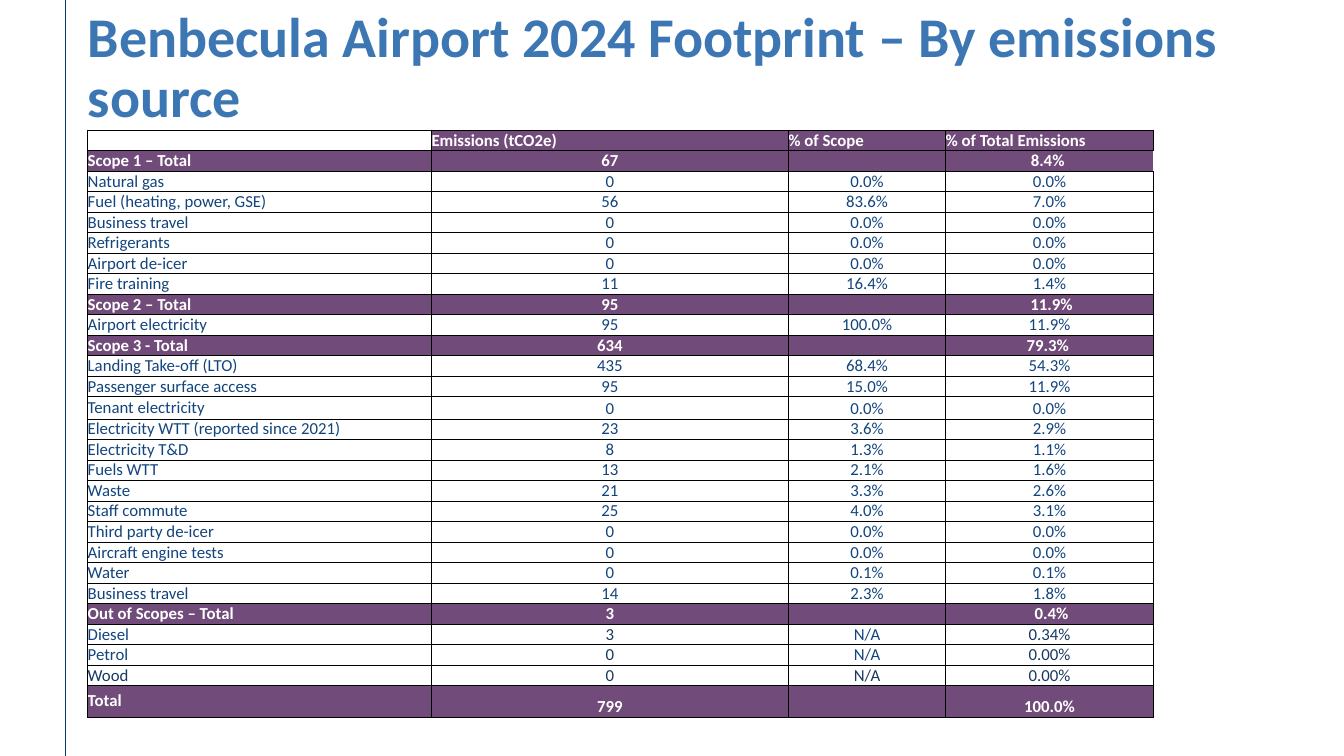
from lxml import etree
from pptx import Presentation
from pptx.dml.color import RGBColor
from pptx.enum.shapes import MSO_CONNECTOR
from pptx.enum.text import MSO_ANCHOR, MSO_AUTO_SIZE, PP_ALIGN
from pptx.oxml.ns import qn
from pptx.util import Inches, Pt

STRAIGHT = MSO_CONNECTOR.STRAIGHT
TOP, MIDDLE, BOTTOM = MSO_ANCHOR.TOP, MSO_ANCHOR.MIDDLE, MSO_ANCHOR.BOTTOM
LEFT, CENTER = PP_ALIGN.LEFT, PP_ALIGN.CENTER
NO_AUTOFIT = MSO_AUTO_SIZE.NONE

COLORS = {
    "title": "3C77B3",
    "rule": "023671",
    "band": "714B79",
    "white": "FFFFFF",
    "body": "12447D",
    "dark": "183860",
    "border": "000000",
}
FONT = "Calibri"
TITLE = "Benbecula Airport 2024 Footprint – By emissions source"
COLUMN_WIDTHS = [3.41, 3.54, 1.56, 2.06]
ROW_HEIGHT = 0.19
SPECIAL_HEIGHTS = {"": 0.18, "Tenant electricity": 0.22, "Wood": 0.18, "Total": 0.31}

EMISSIONS = [
    ("", "Emissions (tCO2e)", "% of Scope", "% of Total Emissions"),
    ("Scope 1 – Total", "67", "", "8.4% "),
    ("Natural gas", "0", "0.0%", "0.0%"),
    ("Fuel (heating, power, GSE)", "56", "83.6%", "7.0%"),
    ("Business travel", "0", "0.0%", "0.0%"),
    ("Refrigerants", "0", "0.0%", "0.0%"),
    ("Airport de-icer", "0", "0.0%", "0.0%"),
    ("Fire training", "11", "16.4%", "1.4%"),
    ("Scope 2 – Total", "95", "", " 11.9%"),
    ("Airport electricity", "95", "100.0%", "11.9%"),
    ("Scope 3 - Total", "634", "", "79.3% "),
    ("Landing Take-off (LTO)", "435", "68.4%", "54.3%"),
    ("Passenger surface access", "95", "15.0%", "11.9%"),
    ("Tenant electricity", "0", "0.0%", "0.0%"),
    ("Electricity WTT (reported since 2021)", "23", "3.6%", "2.9%"),
    ("Electricity T&D", "8", "1.3%", "1.1%"),
    ("Fuels WTT", "13", "2.1%", "1.6%"),
    ("Waste", "21", "3.3%", "2.6%"),
    ("Staff commute", "25", "4.0%", "3.1%"),
    ("Third party de-icer", "0", "0.0%", "0.0%"),
    ("Aircraft engine tests", "0", "0.0%", "0.0%"),
    ("Water", "0", "0.1%", "0.1%"),
    ("Business travel", "14", "2.3%", "1.8%"),
    ("Out of Scopes – Total", "3", "", " 0.4%"),
    ("Diesel", "3", "N/A", "0.34%"),
    ("Petrol", "0", "N/A", "0.00%"),
    ("Wood", "0", "N/A", "0.00%"),
    ("Total", "799", "", "100.0%"),
]


def rgb(name):
    return RGBColor.from_string(COLORS[name])


def set_font(para, size, color, bold):
    font = para.font
    font.name, font.size, font.bold = FONT, Pt(size), bold
    font.color.rgb = rgb(color)


def clear_margins(target):
    target.margin_left = target.margin_right = 0
    target.margin_top = target.margin_bottom = 0


def add_title(page):
    title = page.shapes.title
    title.left, title.top = Inches(0.87), Inches(0.09)
    title.width, title.height = Inches(12.68), Inches(1.06)
    frame = title.text_frame
    frame.text = TITLE
    frame.word_wrap = True
    frame.auto_size = NO_AUTOFIT
    frame.vertical_anchor = TOP
    clear_margins(frame)
    para = frame.paragraphs[0]
    para.alignment = LEFT
    para.line_spacing = 0.9
    set_font(para, 40, "title", True)


def add_margin_rule(page, height):
    rule = page.shapes.add_connector(STRAIGHT, Inches(0.65), 0, Inches(0.65), height)
    rule.line.color.rgb = rgb("rule")
    rule.line.width = Pt(1)
    etree.SubElement(rule._element.spPr, qn("a:effectLst"))


def set_borders(cell, sides):
    properties = cell._tc.get_or_add_tcPr()
    for side in "LRTB":
        line = etree.SubElement(properties, qn(f"a:ln{side}"), w=str(Pt(0.5)))
        if side in sides:
            fill = etree.SubElement(line, qn("a:solidFill"))
            etree.SubElement(fill, qn("a:srgbClr"), val=COLORS["border"])
        else:
            etree.SubElement(line, qn("a:noFill"))


def text_color(label, column, banded):
    if banded:
        return "white"
    if label == "Wood" or (label in ("Diesel", "Petrol") and column in (1, 3)):
        return "dark"
    return "body"


def fill_cell(cell, text, label, column):
    header = label == ""
    banded = "Total" in label or (header and column > 0)
    # The Scope 1 total is open on the right
    open_right = label.startswith("Scope 1") and column == 3
    set_borders(cell, "LTB" if open_right else "LRTB")
    if banded:
        cell.fill.solid()
        cell.fill.fore_color.rgb = rgb("band")
    else:
        cell.fill.background()

    clear_margins(cell)
    left_aligned = header or column == 0
    in_middle = left_aligned and (label, column) != ("Business travel", 0)
    cell.vertical_anchor = MIDDLE if in_middle else BOTTOM
    cell.text = text
    para = cell.text_frame.paragraphs[0]
    para.alignment = LEFT if left_aligned else CENTER
    set_font(para, 12, text_color(label, column, banded), banded)
    if not text:
        etree.SubElement(para._p, qn("a:endParaRPr"), sz="1200")


def add_emissions_table(page):
    heights = [SPECIAL_HEIGHTS.get(row[0], ROW_HEIGHT) for row in EMISSIONS]
    frame = page.shapes.add_table(
        len(EMISSIONS), len(COLUMN_WIDTHS), Inches(0.87), Inches(1.29),
        Inches(sum(COLUMN_WIDTHS)), Inches(sum(heights)))
    table = frame.table
    table.first_row = table.horz_banding = False
    for column, width in zip(table.columns, COLUMN_WIDTHS):
        column.width = Inches(width)
    for row, height, values in zip(table.rows, heights, EMISSIONS):
        row.height = Inches(height)
        for index, text in enumerate(values):
            fill_cell(row.cells[index], text, values[0], index)


def main():
    deck = Presentation()
    deck.slide_width, deck.slide_height = Inches(13.33), Inches(7.5)
    page = deck.slides.add_slide(deck.slide_layouts.get_by_name("Title Only"))
    add_margin_rule(page, deck.slide_height)
    add_title(page)
    add_emissions_table(page)
    deck.save("out.pptx")


if __name__ == "__main__":
    main()
